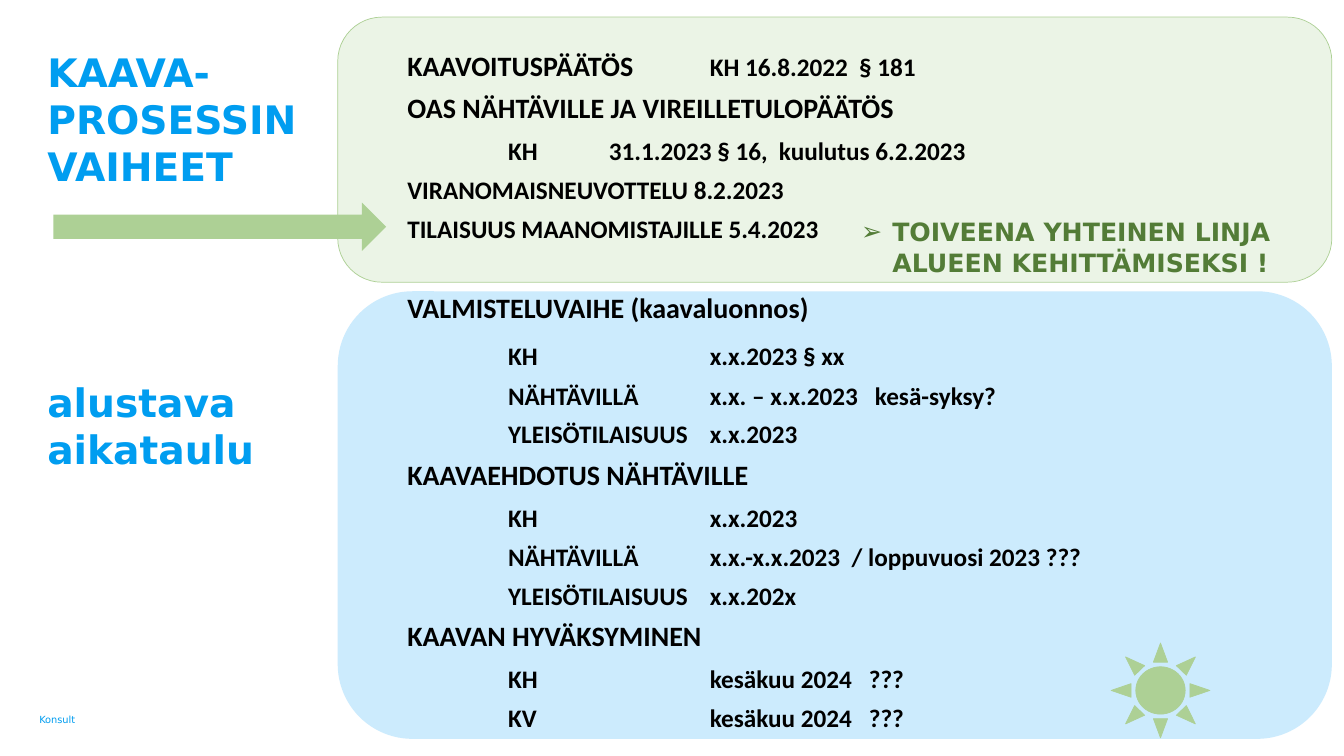
from lxml import etree
from pptx import Presentation
from pptx import util as u
from pptx.dml.color import RGBColor
from pptx.enum import shapes, text
from pptx.oxml import ns

PX = 9144
BLUE = RGBColor(0x00, 0x9D, 0xF0)
SKY = RGBColor(0xCC, 0xEB, 0xFD)
PALE = RGBColor(0xCE, 0xE3, 0xBF)
GREEN = RGBColor(0xAD, 0xD0, 0x95)
MOSS = RGBColor(0x53, 0x7C, 0x37)
BLACK = RGBColor(0, 0, 0)
SANS = "DejaVu Sans"
KIND = shapes.MSO_SHAPE
TABS = (100, 200, 300)

DONE = [
    ("KAAVOITUSPÄÄTÖS\t", "KH 16.8.2022  § 181"),
    ("OAS NÄHTÄVILLE JA VIREILLETULOPÄÄTÖS", ""),
    ("\t", "KH\t31.1.2023 § 16,  kuulutus 6.2.2023"),
    ("", "VIRANOMAISNEUVOTTELU 8.2.2023"),
    ("", "TILAISUUS MAANOMISTAJILLE 5.4.2023"),
]
PLAN = [
    ("VALMISTELUVAIHE (kaavaluonnos)", ""),
    ("\t", "KH\t\tx.x.2023 § xx"),
    ("", "\tNÄHTÄVILLÄ\tx.x. – x.x.2023   kesä-syksy?"),
    ("", "\tYLEISÖTILAISUUS\tx.x.2023"),
    ("KAAVAEHDOTUS NÄHTÄVILLE", ""),
    ("\t", "KH\t\tx.x.2023"),
    ("", "\tNÄHTÄVILLÄ\tx.x.-x.x.2023  / loppuvuosi 2023 ???"),
    ("", "\tYLEISÖTILAISUUS\tx.x.202x"),
    ("KAAVAN HYVÄKSYMINEN", ""),
    ("\t", "KH\t\tkesäkuu 2024   ???"),
    ("", "\tKV\t\tkesäkuu 2024   ???"),
]


def scale(box):
    return [n * PX for n in box]


def add_form(slide, kind, box, fill, line=None):
    form = slide.shapes.add_shape(kind, *scale(box))
    form.shadow.inherit = False
    form.fill.solid()
    form.fill.fore_color.rgb = fill
    if line is None:
        form.line.fill.background()
    else:
        form.line.color.rgb = line
        form.line.width = u.Pt(0.5)
    return form


def add_frame(slide, box):
    frame = slide.shapes.add_textbox(*scale(box)).text_frame
    frame.word_wrap = True
    frame.margin_left = frame.margin_right = 0
    frame.margin_top = frame.margin_bottom = 0
    return frame


def style(run, name, size, color, bold=True):
    run.font.name = name
    run.font.size = u.Pt(size)
    run.font.color.rgb = color
    run.font.bold = bold


def add_label(slide, box, words, size, color, bold=True):
    frame = add_frame(slide, box)
    frame.text = words
    for para in frame.paragraphs:
        for run in para.runs:
            style(run, SANS, size, color, bold)
    return frame


def set_tabs(para):
    stops = etree.SubElement(para._p.get_or_add_pPr(), ns.qn("a:tabLst"))
    for stop in scale(TABS):
        etree.SubElement(stops, ns.qn("a:tab"), pos=str(stop), algn="l")


def add_steps(slide, box, steps):
    frame = add_frame(slide, box)
    for i, step in enumerate(steps):
        para = frame.add_paragraph() if i else frame.paragraphs[0]
        para.space_after = u.Pt(6)
        set_tabs(para)
        for words, size in zip(step, (20, 18)):
            if words:
                run = para.add_run()
                run.text = words
                style(run, "Calibri", size, BLACK)
    return frame


def add_panel(slide, box, steps, top, fill, line=None):
    x, y, w, h = box
    panel = add_form(slide, KIND.ROUNDED_RECTANGLE, box, fill, line)
    frame = add_steps(slide, (x + 69, y + top, w - 110, h - top), steps)
    return panel, frame


def add_done(slide, box):
    x, y, w, h = box
    panel, _ = add_panel(slide, box, DONE, 31, PALE, GREEN)
    tint = panel.fill._xPr.find(".//" + ns.qn("a:srgbClr"))
    etree.SubElement(tint, ns.qn("a:alpha"), val="39000")
    add_form(slide, KIND.RIGHT_ARROW, (x - 282, y + 184, 330, 48), GREEN)
    note = add_label(slide, (x + 519, y + 198, 443, 61),
                     "TOIVEENA YHTEINEN LINJA ALUEEN KEHITTÄMISEKSI !", 18, MOSS)
    props = note.paragraphs[0]._p.get_or_add_pPr()
    props.set("marL", str(31 * PX))
    props.set("indent", str(-31 * PX))
    etree.SubElement(props, ns.qn("a:buFont"), typeface=SANS)
    etree.SubElement(props, ns.qn("a:buChar"), char="➢")


def add_plan(slide, box):
    x, y, w, h = box
    _, frame = add_panel(slide, box, PLAN, -1, SKY)
    frame.paragraphs[0].space_after = u.Pt(10)
    add_form(slide, KIND.SUN, (x + 767, y + 349, 98, 94), GREEN, GREEN)


def add_side(slide, box):
    x, y, w, h = box
    add_label(slide, (x, y, w, 140), "KAAVA-\vPROSESSIN\vVAIHEET", 28, BLUE)
    add_label(slide, (x, y + 327, w, 94), "alustava aikataulu", 28, BLUE)
    foot = add_label(slide, (x - 8, y + h - 24, 85, 24), "Konsult", 7, BLUE, False)
    foot.vertical_anchor = text.MSO_ANCHOR.BOTTOM


def main():
    deck = Presentation()
    deck.slide_width, deck.slide_height = scale((1333, 750))
    slide = deck.slides.add_slide(deck.slide_layouts[6])
    add_plan(slide, (335, 289, 986, 444))
    add_done(slide, (335, 17, 986, 263))
    add_side(slide, (47, 48, 280, 672))
    deck.save("out.pptx")


if __name__ == "__main__":
    main()
